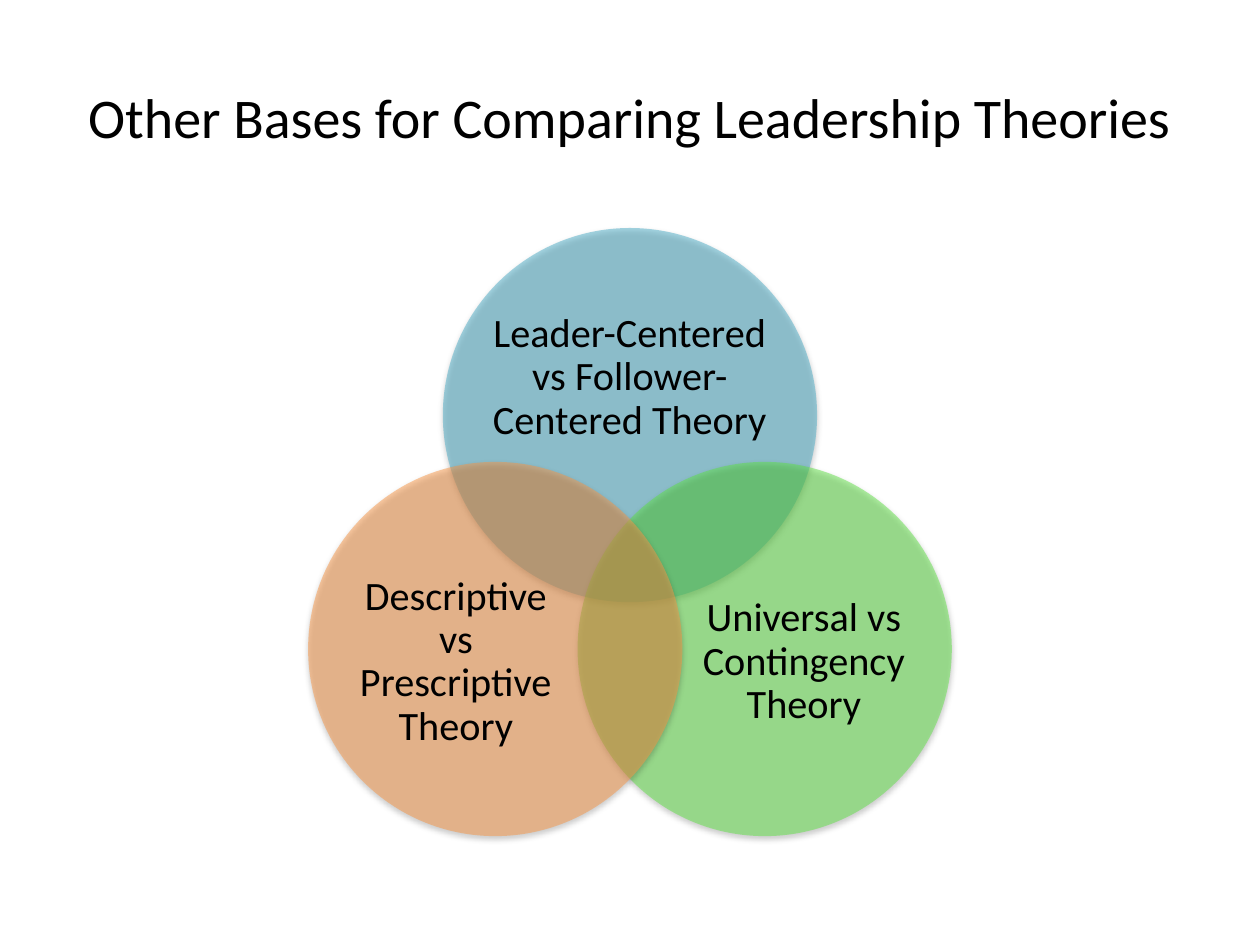
from lxml import etree
from pptx import Presentation
from pptx.dml.color import RGBColor
from pptx.enum.shapes import MSO_SHAPE
from pptx.enum.text import MSO_ANCHOR, PP_ALIGN
from pptx.oxml import parse_xml
from pptx.oxml.ns import nsdecls, qn
from pptx.util import Inches, Pt

OVAL = MSO_SHAPE.OVAL
MIDDLE = MSO_ANCHOR.MIDDLE
CENTER = PP_ALIGN.CENTER

SHADOW = f"""<a:effectLst {nsdecls("a")}>
  <a:outerShdw blurRad="{Pt(3.1)}" dist="{Pt(1.6)}" dir="5400000" rotWithShape="0">
    <a:srgbClr val="000000"><a:alpha val="38000"/></a:srgbClr>
  </a:outerShdw>
</a:effectLst>"""


def color(hex_value):
    return RGBColor.from_string(hex_value)


def add_text(left, top, width, height, text, size, margin, spacing):
    box = page.shapes.add_textbox(*map(Inches, (left, top, width, height)))
    frame = box.text_frame
    frame_format = {"word_wrap": True, "vertical_anchor": MIDDLE}
    for side in ("left", "right", "top", "bottom"):
        frame_format[f"margin_{side}"] = Inches(margin)
    for name, value in frame_format.items():
        setattr(frame, name, value)
    para = frame.paragraphs[0]
    para.alignment = CENTER
    para.line_spacing = spacing
    span = para.add_run()
    span.text = text
    for name, value in {"name": "Calibri", "size": Pt(size)}.items():
        setattr(span.font, name, value)
    span.font.color.rgb = color("000000")


deck = Presentation()
deck.slide_width, deck.slide_height = Inches(10), Inches(7.5)
page = deck.slides.add_slide(deck.slide_layouts[6])

# Title
add_text(0.5, 0.3, 9, 1.25, "Other Bases for Comparing Leadership Theories", 32, 0.1, 1.0)

# Venn diagram: circle shifts and label areas are shares of the diameter
diameter = 2.97
first_left = 5 - diameter / 2
first_top = 1.81
circles = [
    ("4BACC6", 0, 0, (0.13, 0.175, 0.74, 0.45),
     "Leader-Centered vs Follower-Centered Theory"),
    ("60E146", 0.36, 0.625, (0.305, 0.26, 0.6, 0.55),
     "Universal vs Contingency Theory"),
    ("F79646", -0.36, 0.625, (0.095, 0.26, 0.6, 0.55),
     "Descriptive vs Prescriptive Theory"),
]
for fill, shift_x, shift_y, label, text in circles:
    left = first_left + shift_x * diameter
    top = first_top + shift_y * diameter
    circle = page.shapes.add_shape(OVAL, *map(Inches, (left, top, diameter, diameter)))
    circle.fill.solid()
    circle.fill.fore_color.rgb = color(fill)
    circle.line.fill.background()

    # Half-transparent fill and soft shadow
    properties = circle.fill._xPr
    tone = properties.find(qn("a:solidFill")).find(qn("a:srgbClr"))
    etree.SubElement(tone, qn("a:alpha"), val="50000")
    properties.append(parse_xml(SHADOW))

    x, y, width, height = (share * diameter for share in label)
    add_text(left + x, top + y, width, height, text, 23, 0, 0.9)

deck.save("out.pptx")
